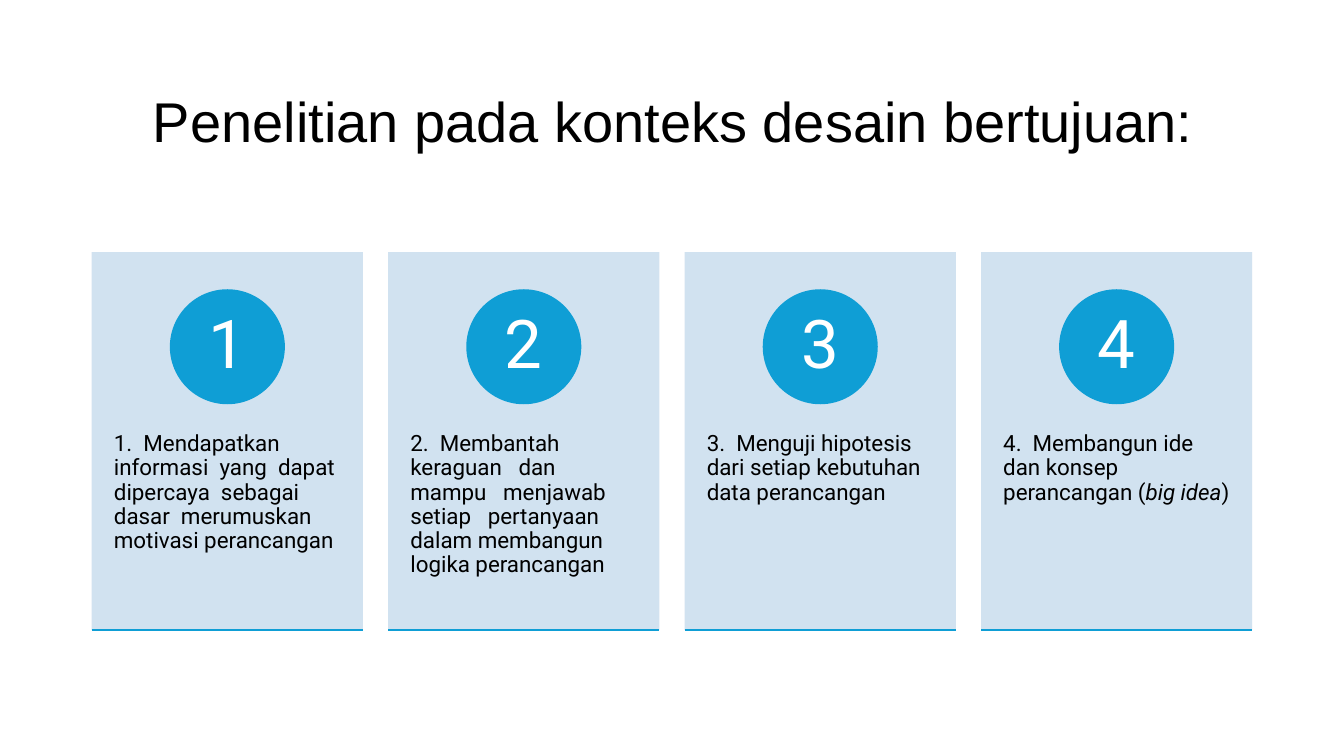
"""Build a slide with four numbered cards on the aims of design research."""
from dataclasses import dataclass

from lxml import etree
from pptx import Presentation
from pptx.dml.color import RGBColor
from pptx.enum import shapes, text
from pptx.oxml import ns
from pptx.util import Inches, Pt

TITLE = "Penelitian pada konteks desain bertujuan:"
CARDS = [
    [("1.  Mendapatkan  informasi  yang  dapat  dipercaya  sebagai  dasar  "
      "merumuskan motivasi perancangan", False)],
    [("2.  Membantah   keraguan   dan   mampu   menjawab   setiap   pertanyaan   "
      "dalam membangun logika perancangan", False)],
    [("3.  Menguji hipotesis dari setiap kebutuhan data perancangan", False)],
    [("4.  Membangun ide dan konsep perancangan (", False), ("big idea", True), (")", False)],
]


@dataclass(frozen=True)
class Theme:
    """Colours, fonts and type sizes."""
    card: RGBColor = RGBColor(0xCC, 0xDF, 0xEF)
    accent: RGBColor = RGBColor(0x0F, 0x9E, 0xD5)
    dark: RGBColor = RGBColor(0, 0, 0)
    light: RGBColor = RGBColor(0xFF, 0xFF, 0xFF)
    title_font: str = "Arial"
    body_font: str = "Roboto"
    title_size: int = 40
    number_size: int = 48
    body_size: int = 16
    line_width: float = 1.5
    line_spacing: float = 0.9
    card_opacity: int = 90


THEME = Theme()
LEFT, TOP = 0.91, 2.5
CARD_WIDTH, CARD_HEIGHT, CARD_STEP = 2.69, 3.75, 2.94
CIRCLE_SIZE, CIRCLE_TOP = 1.12, 2.88
TEXT_TOP, TEXT_HEIGHT, TEXT_WIDTH = 4.29, 1.53, 2.25


def clear_margins(frame):
    """Remove the insets of a text frame."""
    frame.margin_left = frame.margin_right = Inches(0)
    frame.margin_top = frame.margin_bottom = Inches(0)


def write(paragraph, runs, font, size, color, alignment):
    """Write (words, italic) runs into a paragraph and format them."""
    paragraph.alignment = alignment
    paragraph.line_spacing = THEME.line_spacing
    for words, italic in runs:
        run = paragraph.add_run()
        run.text = words
        run.font.name = font
        run.font.size = Pt(size)
        run.font.color.rgb = color
        run.font.italic = italic


def add_block(slide, kind, left, top, width, height, color):
    """Add a flat preset shape in one colour."""
    shape = slide.shapes.add_shape(
        kind, Inches(left), Inches(top), Inches(width), Inches(height))
    shape.shadow.inherit = False
    shape.fill.solid()
    shape.fill.fore_color.rgb = color
    shape.line.fill.background()
    return shape


def set_opacity(shape, percent):
    """Make the fill of a shape partly transparent."""
    for color in shape.element.spPr.iter(ns.qn("a:srgbClr")):
        etree.SubElement(color, ns.qn("a:alpha"), val=str(percent * 1000))


def add_title(slide):
    """Fill and place the title placeholder."""
    title = slide.shapes.title
    title.left, title.top = Inches(0.92), Inches(0.61)
    title.width, title.height = Inches(11.5), Inches(1.24)
    frame = title.text_frame
    frame.auto_size = text.MSO_AUTO_SIZE.NONE
    frame.vertical_anchor = text.MSO_ANCHOR.MIDDLE
    write(frame.paragraphs[0], [(TITLE, False)], THEME.title_font,
          THEME.title_size, THEME.dark, text.PP_ALIGN.CENTER)


def add_card(slide, index, runs):
    """Add one card with its text, numbered circle and base line."""
    left = LEFT + index * CARD_STEP
    card = add_block(slide, shapes.MSO_SHAPE.RECTANGLE, left, TOP,
                     CARD_WIDTH, CARD_HEIGHT, THEME.card)
    set_opacity(card, THEME.card_opacity)

    box = slide.shapes.add_textbox(
        Inches(left + (CARD_WIDTH - TEXT_WIDTH) / 2), Inches(TEXT_TOP),
        Inches(TEXT_WIDTH), Inches(TEXT_HEIGHT))
    frame = box.text_frame
    frame.word_wrap = True
    clear_margins(frame)
    write(frame.paragraphs[0], runs, THEME.body_font, THEME.body_size,
          THEME.dark, text.PP_ALIGN.LEFT)

    circle = add_block(slide, shapes.MSO_SHAPE.OVAL,
                       left + (CARD_WIDTH - CIRCLE_SIZE) / 2, CIRCLE_TOP,
                       CIRCLE_SIZE, CIRCLE_SIZE, THEME.accent)
    circle.line.color.rgb = THEME.accent
    circle.line.width = Pt(THEME.line_width)
    frame = circle.text_frame
    frame.vertical_anchor = text.MSO_ANCHOR.MIDDLE
    clear_margins(frame)
    write(frame.paragraphs[0], [(str(index + 1), False)], THEME.body_font,
          THEME.number_size, THEME.light, text.PP_ALIGN.CENTER)

    bottom = Inches(TOP + CARD_HEIGHT)
    base = slide.shapes.add_connector(shapes.MSO_CONNECTOR.STRAIGHT, Inches(left),
                                      bottom, Inches(left + CARD_WIDTH), bottom)
    base.line.color.rgb = THEME.accent
    base.line.width = Pt(THEME.line_width)
    etree.SubElement(base.element.spPr, ns.qn("a:effectLst"))


def main():
    """Build and save the presentation."""
    presentation = Presentation()
    presentation.slide_width = Inches(13.33)
    presentation.slide_height = Inches(7.5)
    slide = presentation.slides.add_slide(presentation.slide_layouts[5])
    add_title(slide)
    for index, runs in enumerate(CARDS):
        add_card(slide, index, runs)
    presentation.save("out.pptx")


if __name__ == "__main__":
    main()
